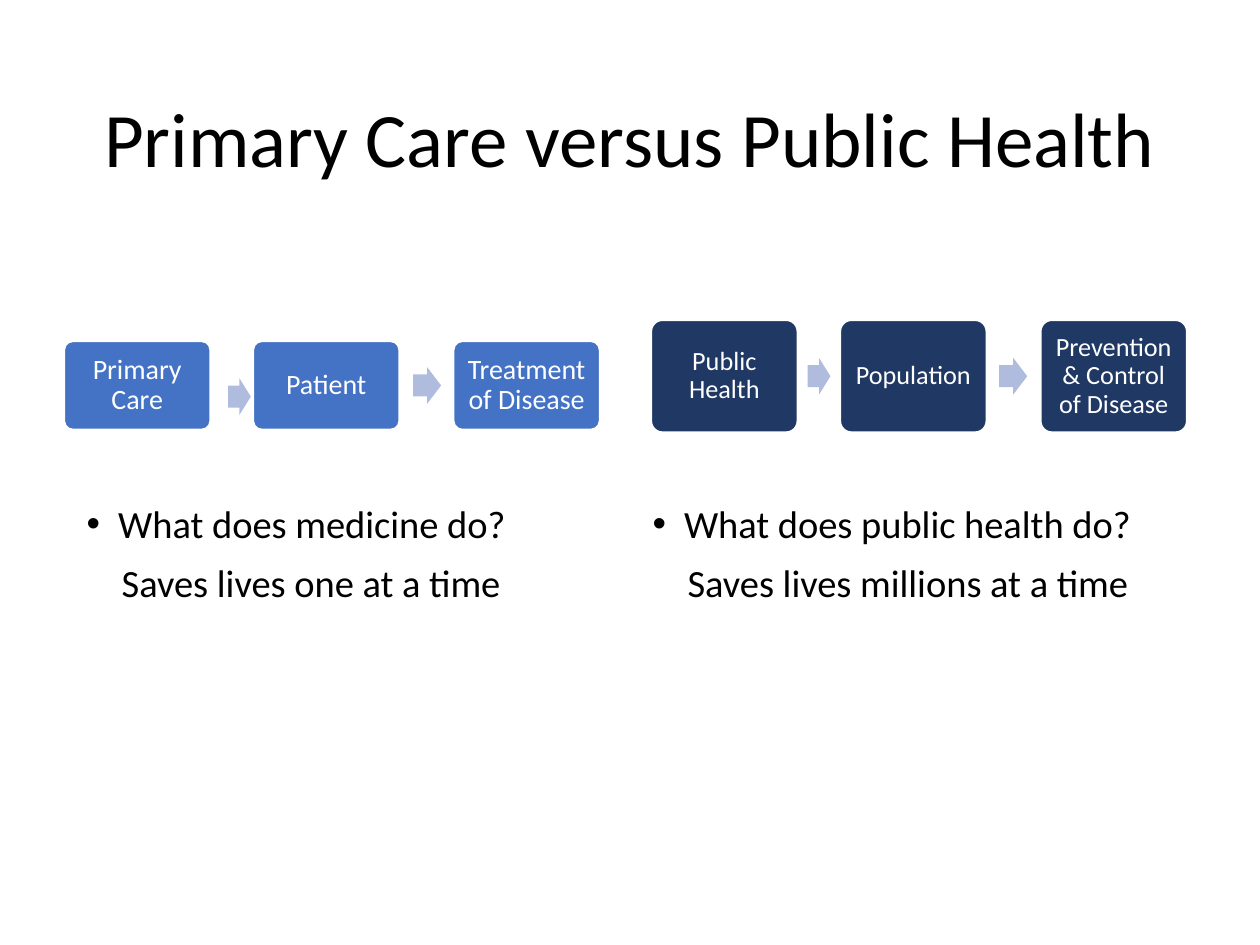
from dataclasses import dataclass

from pptx import Presentation
from pptx.dml.color import RGBColor
from pptx.enum import shapes, text
from pptx.oxml import parse_xml
from pptx.oxml.ns import nsdecls
from pptx.util import Pt


@dataclass(frozen=True)
class Theme:
    font: str = "Calibri"
    ink: str = "000000"
    white: str = "FFFFFF"
    blue: str = "4472C4"
    navy: str = "203864"
    arrow: str = "B0BCDE"
    title_size: float = 44
    body_size: float = 22
    line_spacing: float = 0.9


@dataclass(frozen=True)
class Arrow:
    offset: float
    width: float
    drop: float = 0


@dataclass(frozen=True)
class Flow:
    left: float
    top: float
    height: float
    color: str
    size: float
    inset: float
    steps: tuple[str, ...]
    arrows: tuple[Arrow, ...]


@dataclass(frozen=True)
class Column:
    left: float
    height: float
    question: str
    answer: str


THEME = Theme()
STEP_OFFSETS = (0, 108, 222.5)
STEP_WIDTH = 83.5
ARROW_HEIGHT = 21
COLUMN_TOP, COLUMN_WIDTH = 285, 304.5
BULLET_INDENT, ANSWER_INDENT = 18, 20

FLOWS = (
    Flow(36.7, 195, 50.5, THEME.blue, 16, 6.5,
         ("Primary Care", "Patient", "Treatment of Disease"),
         (Arrow(93.6, 13, drop=6.4), Arrow(199.4, 16))),
    Flow(372.2, 183, 64, THEME.navy, 15, 6,
         ("Public Health", "Population", "Prevention & Control of Disease"),
         (Arrow(89.3, 13), Arrow(198.8, 16))),
)
COLUMNS = (
    Column(42.5, 177, "What does medicine do?", "Saves lives one at a time"),
    Column(365.8, 201, "What does public health do?",
           "Saves lives millions at a time"),
)


def style_text(para, size: float, color: str, align=None) -> None:
    para.line_spacing = THEME.line_spacing
    para.alignment = align
    for span in para.runs:
        span.font.name = THEME.font
        span.font.size = Pt(size)
        span.font.color.rgb = RGBColor.from_string(color)


def add_block(page, kind, left: float, top: float, width: float,
              height: float, color: str):
    block = page.shapes.add_shape(kind, Pt(left), Pt(top), Pt(width), Pt(height))
    block.shadow.inherit = False
    block.fill.solid()
    block.fill.fore_color.rgb = RGBColor.from_string(color)
    return block


def add_text_box(page, left: float, top: float, width: float, height: float):
    box = page.shapes.add_textbox(Pt(left), Pt(top), Pt(width), Pt(height))
    box.text_frame.word_wrap = True
    return box.text_frame


def add_title(page, words: str) -> None:
    frame = add_text_box(page, 49.5, 29, 621, 104.5)
    frame.vertical_anchor = text.MSO_ANCHOR.MIDDLE
    frame.text = words
    style_text(frame.paragraphs[0], THEME.title_size, THEME.ink,
               text.PP_ALIGN.CENTER)


def add_step(page, flow: Flow, offset: float, words: str) -> None:
    box = add_block(page, shapes.MSO_SHAPE.ROUNDED_RECTANGLE,
                    flow.left + offset, flow.top, STEP_WIDTH, flow.height,
                    flow.color)
    box.adjustments[0] = 0.1
    box.line.color.rgb = RGBColor.from_string(THEME.white)
    box.line.width = Pt(1)
    frame = box.text_frame
    frame.word_wrap = True
    frame.vertical_anchor = text.MSO_ANCHOR.MIDDLE
    frame.margin_left = frame.margin_right = Pt(flow.inset)
    frame.margin_top = frame.margin_bottom = Pt(flow.inset)
    frame.text = words
    style_text(frame.paragraphs[0], flow.size, THEME.white,
               text.PP_ALIGN.CENTER)


def add_arrow(page, flow: Flow, arrow: Arrow) -> None:
    top = flow.top + (flow.height - ARROW_HEIGHT) / 2 + arrow.drop
    block = add_block(page, shapes.MSO_SHAPE.RIGHT_ARROW,
                      flow.left + arrow.offset, top, arrow.width,
                      ARROW_HEIGHT, THEME.arrow)
    block.adjustments[0] = 0.6
    block.adjustments[1] = 0.5
    block.line.fill.background()


def add_flow(page, flow: Flow) -> None:
    for offset, words in zip(STEP_OFFSETS, flow.steps):
        add_step(page, flow, offset, words)
    for arrow in flow.arrows:
        add_arrow(page, flow, arrow)


def indent(para, left: float, first: float = 0) -> None:
    properties = para._p.get_or_add_pPr()
    properties.set("marL", str(Pt(left)))
    properties.set("indent", str(Pt(first)))


def add_column(page, column: Column) -> None:
    frame = add_text_box(page, column.left, COLUMN_TOP, COLUMN_WIDTH,
                         column.height)
    frame.text = column.question
    question, answer = frame.paragraphs[0], frame.add_paragraph()
    answer.text = column.answer
    for para in (question, answer):
        style_text(para, THEME.body_size, THEME.ink)
    answer.space_before = Pt(10)
    indent(answer, ANSWER_INDENT)
    # Bullet on the question
    indent(question, BULLET_INDENT, -BULLET_INDENT)
    properties = question._p.get_or_add_pPr()
    properties.append(parse_xml(f'<a:buFont {nsdecls("a")} typeface="Arial"/>'))
    properties.append(parse_xml(f'<a:buChar {nsdecls("a")} char="•"/>'))


def main() -> None:
    deck = Presentation()
    deck.slide_width, deck.slide_height = Pt(720), Pt(540)
    page = deck.slides.add_slide(deck.slide_layouts[6])

    add_title(page, "Primary Care versus Public Health")
    # Questions and answers below the flows
    for column in COLUMNS:
        add_column(page, column)
    # Three-step flows
    for flow in FLOWS:
        add_flow(page, flow)

    deck.save("out.pptx")


if __name__ == "__main__":
    main()
